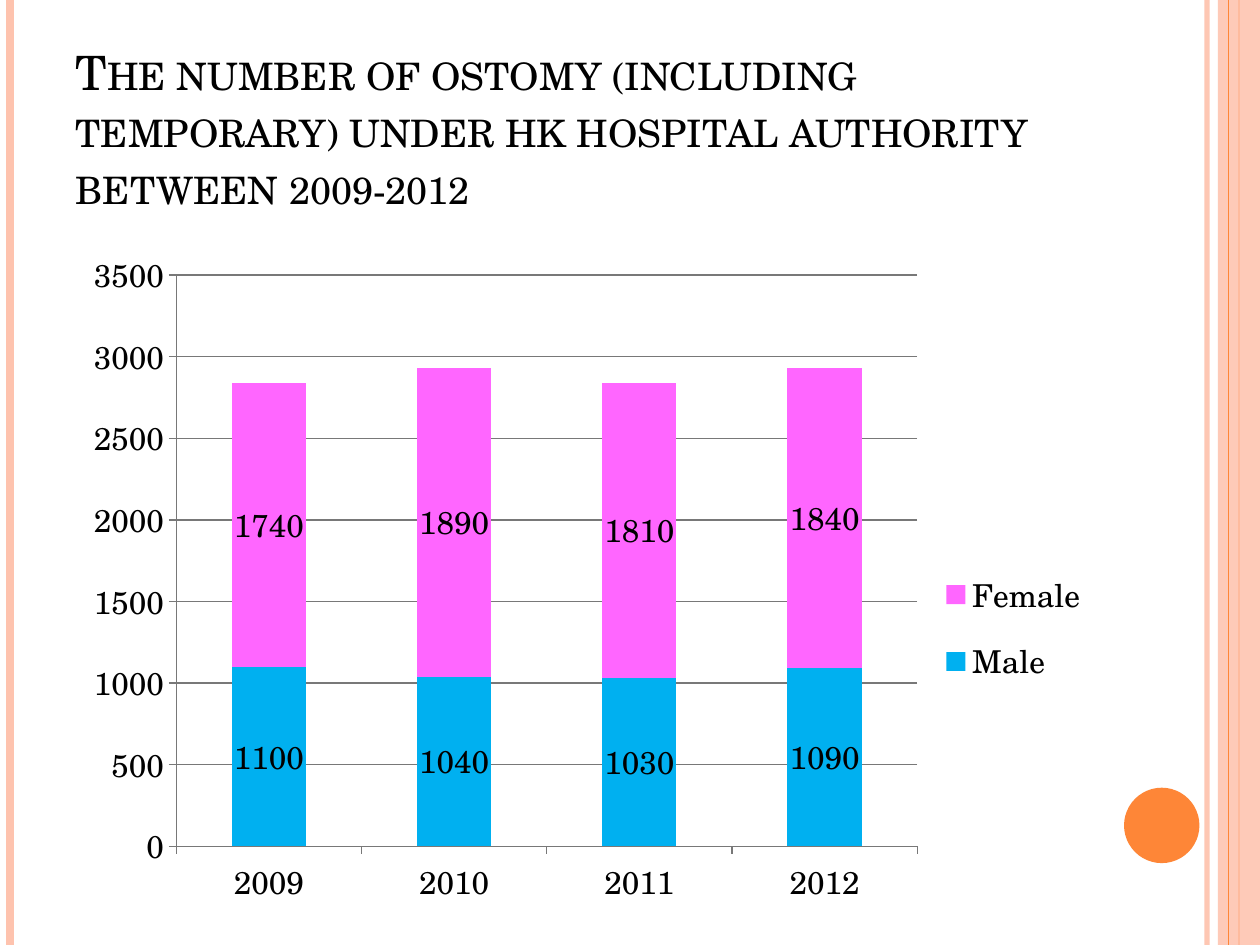
from lxml import etree
from pptx import Presentation
from pptx.chart.data import CategoryChartData
from pptx.dml.color import RGBColor
from pptx.enum import chart as ch, shapes, text
from pptx.oxml import ns
from pptx.util import Cm, Pt

BLACK = RGBColor(0x00, 0x00, 0x00)
GREY = RGBColor(0x78, 0x78, 0x78)
ORANGE = RGBColor(0xFE, 0x86, 0x37)
PEACH = RGBColor(0xFE, 0xC3, 0xAE)
BLUE = RGBColor(0x00, 0xB0, 0xF0)
PINK = RGBColor(0xFF, 0x66, 0xFF)
FONT = "TeX Gyre Schola"
WIDTH, HEIGHT = 25.4, 19.05
TITLE = ("The number of ostomy (including temporary) under hk hospital "
         "authority between 2009-2012")
YEARS = ["2009", "2010", "2011", "2012"]
SERIES = [("Male", [1100, 1040, 1030, 1090], BLUE),
          ("Female", [1740, 1890, 1810, 1840], PINK)]


def apply(obj, values):
    """Set each attribute of obj from a dict."""
    for name, value in values.items():
        setattr(obj, name, value)


def set_font(font, size):
    """Give a font the slide's typeface, colour and a size."""
    apply(font, {"name": FONT, "size": Pt(size), "bold": False})
    font.color.rgb = BLACK


def set_alpha(sp, percent):
    """Make the first solid colour of a shape partly transparent."""
    clr = sp.element.find(".//" + ns.qn("a:srgbClr"))
    etree.SubElement(clr, ns.qn("a:alpha")).set("val", str(percent * 1000))


def add_rule(s, x, color, width):
    """Draw a full-height vertical line."""
    line = s.shapes.add_connector(
        shapes.MSO_CONNECTOR.STRAIGHT, Cm(x), 0, Cm(x), Cm(HEIGHT))
    line.line.color.rgb = color
    line.line.width = Pt(width)
    etree.SubElement(line.element.spPr, ns.qn("a:effectLst"))
    return line


def add_filled(s, kind, box, color):
    """Add a filled preset shape without outline."""
    sp = s.shapes.add_shape(kind, *map(Cm, box))
    sp.shadow.inherit = False
    sp.fill.solid()
    sp.fill.fore_color.rgb = color
    sp.line.fill.background()
    return sp


def add_decor(s):
    """Add the edge lines, the right band and the disc."""
    set_alpha(add_rule(s, 24.33, PEACH, 3), 93)
    add_rule(s, 0.21, PEACH, 4.5)
    band = add_filled(s, shapes.MSO_SHAPE.RECTANGLE,
                      (24.55, 0, WIDTH - 24.55, HEIGHT), PEACH)
    set_alpha(band, 87)
    core = add_rule(s, 24.98, ORANGE, 1.5)
    core.begin_connect(band, 0)
    core.end_connect(band, 2)
    band.element.addprevious(core.element)
    add_rule(s, 24.76, ORANGE, 0.75)
    add_filled(s, shapes.MSO_SHAPE.OVAL, (22.66, 15.88, 1.52, 1.52), ORANGE)


def add_title(s):
    """Place the small-caps title."""
    sp = s.shapes.title
    apply(sp, {"left": Cm(1.27), "top": Cm(0.43),
               "width": Cm(20.75), "height": Cm(4.01)})
    tf = sp.text_frame
    apply(tf, {"word_wrap": True, "auto_size": text.MSO_AUTO_SIZE.NONE,
               "vertical_anchor": text.MSO_ANCHOR.BOTTOM})
    p = tf.paragraphs[0]
    p.alignment = text.PP_ALIGN.LEFT
    r = p.add_run()
    r.text = TITLE
    set_font(r.font, 27)
    r._r.get_or_add_rPr().set("cap", "small")


def make_layout(box, inner=False):
    """Build a manual chart layout from x, y, w, h fractions."""
    layout = etree.Element(ns.qn("c:layout"))
    manual = etree.SubElement(layout, ns.qn("c:manualLayout"))
    items = [("layoutTarget", "inner")] if inner else []
    items += [("xMode", "edge"), ("yMode", "edge")]
    items += zip("xywh", map(str, box))
    for tag, value in items:
        etree.SubElement(manual, ns.qn("c:" + tag)).set("val", value)
    return layout


def place_parts(chart):
    """Position the plot area and the legend."""
    plot = chart.element.find(".//" + ns.qn("c:plotArea"))
    legend = chart.element.find(".//" + ns.qn("c:legend"))
    for part in (plot, legend):
        for old in part.findall(ns.qn("c:layout")):
            part.remove(old)
    plot.insert(0, make_layout((0.11, 0.05, 0.72, 0.85), inner=True))
    legend.find(ns.qn("c:legendPos")).addnext(
        make_layout((0.85, 0.46, 0.15, 0.23)))


def add_ostomy_chart(s):
    """Add the stacked column chart of ostomy numbers."""
    data = CategoryChartData()
    data.categories = YEARS
    for name, values, _ in SERIES:
        data.add_series(name, values)
    chart = s.shapes.add_chart(
        ch.XL_CHART_TYPE.COLUMN_STACKED, Cm(1.27), Cm(4.87),
        Cm(20.75), Cm(13.55), data).chart
    set_font(chart.font, 18)
    apply(chart, {"has_title": False, "has_legend": True})
    apply(chart.legend, {"position": ch.XL_LEGEND_POSITION.RIGHT,
                         "include_in_layout": False})
    plot = chart.plots[0]
    apply(plot, {"gap_width": 150, "overlap": 100,
                 "vary_by_categories": False})
    for series, (_, _, color) in zip(plot.series, SERIES):
        series.format.fill.solid()
        series.format.fill.fore_color.rgb = color
        series.data_labels.show_value = True
    for axis in (chart.category_axis, chart.value_axis):
        axis.major_tick_mark = ch.XL_TICK_MARK.OUTSIDE
        axis.format.line.color.rgb = GREY
    apply(chart.value_axis, {"minimum_scale": 0, "maximum_scale": 3500,
                             "major_unit": 500, "has_major_gridlines": True})
    chart.value_axis.major_gridlines.format.line.color.rgb = GREY
    place_parts(chart)


def main():
    """Build the slide and save it."""
    prs = Presentation()
    apply(prs, {"slide_width": Cm(WIDTH), "slide_height": Cm(HEIGHT)})
    s = prs.slides.add_slide(prs.slide_layouts[5])
    add_decor(s)
    add_title(s)
    add_ostomy_chart(s)
    prs.save("out.pptx")


if __name__ == "__main__":
    main()
